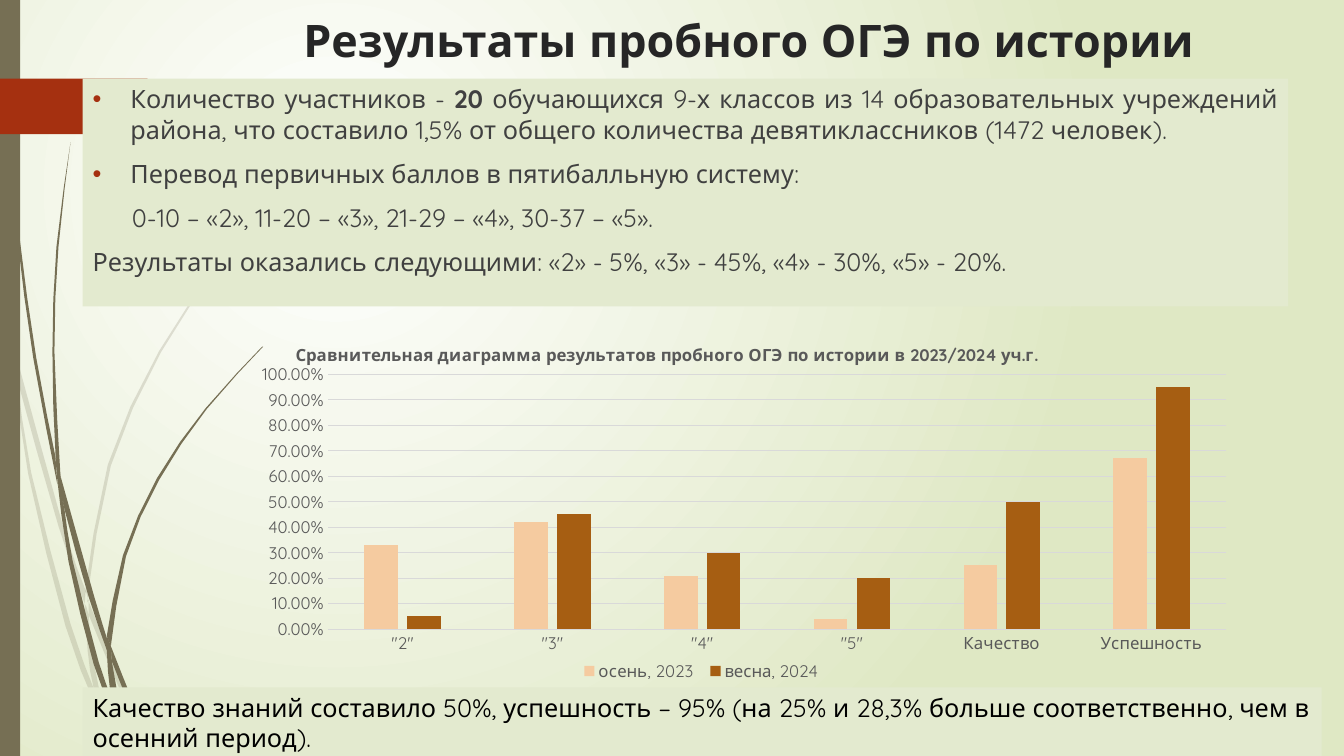
from lxml.etree import SubElement as Sub
from pptx import Presentation
from pptx.chart.data import CategoryChartData
from pptx.dml.color import RGBColor
from pptx.enum.chart import XL_CHART_TYPE as CT, XL_LEGEND_POSITION as LP, XL_TICK_MARK as TM
from pptx.enum.shapes import MSO_SHAPE as SHAPE
from pptx.enum.text import MSO_ANCHOR as ANCHOR, MSO_AUTO_SIZE as AUTO, PP_ALIGN as AL
from pptx.oxml.ns import qn
from pptx.util import Pt

FONT = "Quicksand"
COLORS = {
    "white": "FFFFFF", "green": "DFE8C4", "panel": "E3EACF", "olive": "766F54",
    "red": "A53010", "title": "262626", "body": "404040", "black": "000000",
    "label": "595959", "grid": "D9D9D9", "autumn": "F5CBA0", "spring": "A65E12",
}
FINE = 10

PALE_WISPS = [
    ([(11, 350), (9, 322), (0, 282)], [(0, 299), (10, 344), (11, 350)]),
    ([(14, 345), (17, 376), (58, 522), (84, 599)], [(85, 586), (62, 520), (14, 345)]),
    ([(155, 750), (127, 692), (92, 607), (88, 596)], [(88, 610), (123, 694), (150, 750)]),
    ([(101, 714), (93, 683), (70, 619), (31, 469), (17, 376), (11, 350)],
     [(11, 350), (28, 470), (65, 621), (92, 693), (101, 714)]),
    ([(84, 599), (87, 646), (93, 683), (105, 711)],
     [(103, 706), (91, 646), (88, 610), (84, 599)]),
    ([(88, 596), (88, 584), (110, 462), (160, 349), (229, 245), (268, 198), (312, 154)],
     [(312, 153), (268, 197), (228, 244), (158, 348), (107, 461), (85, 584), (85, 586)]),
    ([(93, 683), (101, 714), (119, 750)], [(105, 711), (93, 683)]),
]
DARK_WISPS = [
    ([(3, 0), (7, 110), (17, 233), (33, 355), (57, 481)],
     [(55, 453), (36, 355), (19, 232), (8, 109), (4, 0)]),
    ([(60, 472), (64, 505), (88, 592), (106, 645)], [(106, 633), (93, 590), (60, 472)]),
    ([(157, 749), (136, 706), (110, 641)], [(111, 656), (132, 708), (152, 749)]),
    ([(117, 722), (110, 691), (98, 657), (72, 556), (64, 505), (57, 477)],
     [(57, 477), (68, 557), (93, 659), (117, 722)]),
    ([(60, 472), (54, 349), (58, 245), (70, 141)],
     [(70, 141), (56, 245), (52, 349), (55, 449), (60, 472)]),
    ([(55, 449), (57, 477), (64, 505)], [(60, 472), (55, 449)]),
    ([(110, 641), (125, 552), (158, 476), (205, 406), (261, 344)],
     [(260, 344), (204, 405), (156, 474), (122, 551), (106, 631)]),
    ([(106, 645), (110, 691), (122, 719)], [(111, 656), (110, 641), (106, 631)]),
]


def smooth(edge, steps=2):
    ends = [edge[0], *edge, edge[-1]]
    out = [edge[0]]
    for a, b, c, d in zip(ends, ends[1:], ends[2:], ends[3:]):
        for i in range(1, steps + 1):
            t = i / steps
            out.append(tuple(
                b[k] + (c[k] - a[k]) * t / 2
                + (2 * a[k] - 5 * b[k] + 4 * c[k] - d[k]) * t ** 2 / 2
                + (3 * b[k] - a[k] - 3 * c[k] + d[k]) * t ** 3 / 2 for k in (0, 1)))
    return out


class Deck:
    def __init__(self, prs):
        self.s = prs.slides.add_slide(prs.slide_layouts[1])

    def rgb(self, name):
        return RGBColor.from_string(COLORS[name])

    def paint(self, sp, color, alpha=None):
        sp.fill.solid()
        sp.fill.fore_color.rgb = self.rgb(color)
        if alpha:
            clr = sp._element.spPr.find(qn("a:solidFill"))[0]
            Sub(clr, qn("a:alpha")).set("val", str(alpha * 1000))

    def background(self, inner, outer):
        fill = self.s.background.fill
        fill.gradient()
        for stop, color in zip(fill.gradient_stops, (inner, outer)):
            stop.color.rgb = self.rgb(color)
        grad = self.s._element.find(".//" + qn("a:gradFill"))
        grad.remove(grad.find(qn("a:lin")))
        way = Sub(grad, qn("a:path"))
        way.set("path", "circle")
        rect = Sub(way, qn("a:fillToRect"))
        for side, val in zip("ltrb", (50, 50, 100, 100)):
            rect.set(side, str(val * 1000))

    def finish(self, sp, color, alpha=None):
        sp.shadow.inherit = False
        sp.line.fill.background()
        self.paint(sp, color, alpha)

    def shape(self, kind, box, color):
        self.finish(self.s.shapes.add_shape(kind, *map(Pt, box)), color)

    def wisp(self, edges, color, alpha=None):
        pts = [(x * FINE, y * FINE) for edge in edges for x, y in smooth(edge)]
        fb = self.s.shapes.build_freeform(*pts[0], scale=Pt(0.72) / FINE)
        fb.add_line_segments(pts[1:], close=True)
        self.finish(fb.convert_to_shape(), color, alpha)

    def place(self, sp, box):
        self.s.shapes._spTree.append(sp._element)
        sp.left, sp.top, sp.width, sp.height = map(Pt, box)
        tf = sp.text_frame
        tf.word_wrap, tf.auto_size, tf.vertical_anchor = True, AUTO.NONE, ANCHOR.TOP
        return tf

    def font(self, f, size, color, bold=False):
        f.name, f.size, f.bold = FONT, Pt(size), bold
        f.color.rgb = self.rgb(color)

    def para(self, tf, runs, size, color, align=AL.LEFT, margin=0, indent=0, bullet=False):
        first = not tf.paragraphs[0].runs
        p = tf.paragraphs[0] if first else tf.add_paragraph()
        p.alignment = align
        p.space_before = Pt(0 if first else 10)
        pPr = p._p.get_or_add_pPr()
        pPr.set("marL", str(Pt(margin)))
        pPr.set("indent", str(Pt(indent)))
        if bullet:
            Sub(Sub(pPr, qn("a:buClr")), qn("a:srgbClr")).set("val", COLORS["red"])
            Sub(pPr, qn("a:buFont")).set("typeface", "Arial")
            Sub(pPr, qn("a:buChar")).set("char", "•")
        else:
            Sub(pPr, qn("a:buNone"))
        for text, bold in runs:
            r = p.add_run()
            r.text = text
            self.font(r.font, size, color, bold)

    def layout(self, el, **values):
        lay = el.find(qn("c:layout"))
        if lay is None:
            lay = Sub(el, qn("c:layout"))
            overlay = el.find(qn("c:overlay"))
            if overlay is None:
                el.insert(0, lay)
            else:
                overlay.addprevious(lay)
        man = Sub(lay, qn("c:manualLayout"))
        for key, val in values.items():
            Sub(man, qn("c:" + key)).set("val", str(val))

    def chart(self, box, title, cats, series):
        data = CategoryChartData(number_format="0.00%")
        data.categories = cats
        for name, vals, _ in series:
            data.add_series(name, vals)
        ch = self.s.shapes.add_chart(CT.COLUMN_CLUSTERED, *map(Pt, box), data).chart
        self.font(ch.font, 12, "label")
        spPr = Sub(ch._chartSpace, qn("c:spPr"))
        Sub(spPr, qn("a:noFill"))
        Sub(Sub(spPr, qn("a:ln")), qn("a:noFill"))
        ch._chartSpace.find(qn("c:chart")).addnext(spPr)
        ch.has_title = True
        r = ch.chart_title.text_frame.paragraphs[0].add_run()
        r.text = title
        self.font(r.font, 12, "label", True)
        ch.has_legend = True
        ch.legend.position, ch.legend.include_in_layout = LP.BOTTOM, False
        self.font(ch.legend.font, 12, "label")
        edge = dict(xMode="edge", yMode="edge")
        self.layout(ch.chart_title._element, **edge, x=0.18, y=0.21)
        self.layout(ch.legend._element, **edge, x=0.42, y=0.93, w=0.22, h=0.07)
        self.layout(ch._chartSpace.find(".//" + qn("c:plotArea")), layoutTarget="inner",
                    **edge, x=0.21, y=0.29, w=0.77, h=0.58)
        plot = ch.plots[0]
        plot.gap_width, plot.overlap, plot.vary_by_categories = 219, -27, False
        for sr, (_, _, color) in zip(plot.series, series):
            sr.format.fill.solid()
            sr.format.fill.fore_color.rgb = self.rgb(color)
        cat, val = ch.category_axis, ch.value_axis
        for axis in (cat, val):
            axis.major_tick_mark = axis.minor_tick_mark = TM.NONE
            self.font(axis.tick_labels.font, 12, "label")
        val.minimum_scale, val.maximum_scale, val.major_unit = 0, 1, 0.1
        val.tick_labels.number_format, val.tick_labels.number_format_is_linked = "0.00%", False
        val.format.line.fill.background()
        for line in (cat.format.line, val.major_gridlines.format.line):
            line.color.rgb, line.width = self.rgb("grid"), Pt(0.75)


def main():
    prs = Presentation()
    prs.slide_width, prs.slide_height = Pt(960), Pt(540)
    d = Deck(prs)
    d.background("white", "green")
    for wisps, alpha in ((PALE_WISPS, 20), (DARK_WISPS, None)):
        for edges in wisps:
            d.wisp(edges, "olive", alpha)
    d.shape(SHAPE.RECTANGLE, (0, 0, 14.4, 540), "olive")
    d.shape(SHAPE.PENTAGON, (0, 56.2, 125, 39.6), "red")

    tf = d.place(d.s.shapes.title, (138.2, 5.8, 793.4, 100.8))
    d.para(tf, [("Результаты пробного ОГЭ по истории", True)], 32, "title", AL.CENTER)

    sp = d.s.placeholders[1]
    tf = d.place(sp, (59, 56.2, 861.1, 162.7))
    d.paint(sp, "panel")
    item = dict(align=AL.JUSTIFY, margin=27, indent=-27, bullet=True)
    for runs, style in [
        ([("Количество участников - ", False), ("20 ", True),
          ("обучающихся 9-х классов из 14 образовательных учреждений района, что составило 1,5% "
           "от общего количества девятиклассников (1472 человек).", False)], item),
        ([("Перевод первичных баллов в пятибалльную систему:", False)], item),
        ([("0-10 – «2», 11-20 – «3», 21-29 – «4», 30-37 – «5».", False)], dict(indent=28)),
        ([("Результаты оказались следующими: «2» - 5%, «3» - 45%, «4» - 30%, «5» - 20%.", False)],
         dict(align=AL.JUSTIFY)),
    ]:
        d.para(tf, runs, 18, "body", **style)

    d.chart((59, 176.4, 833.8, 313.9),
            "Сравнительная диаграмма результатов пробного ОГЭ по истории в 2023/2024 уч.г.",
            ['"2"', '"3"', '"4"', '"5"', "Качество", "Успешность"],
            [("осень, 2023", (0.33, 0.42, 0.21, 0.04, 0.25, 0.67), "autumn"),
             ("весна, 2024", (0.05, 0.45, 0.3, 0.2, 0.5, 0.95), "spring")])

    box = (59, 491, 885, 49)
    sp = d.s.shapes.add_textbox(*map(Pt, box))
    d.paint(sp, "panel")
    d.para(d.place(sp, box), [("Качество знаний составило 50%, успешность – 95% (на 25% и 28,3% больше "
                               "соответственно, чем в осенний период).", False)], 18, "black")
    prs.save("out.pptx")


if __name__ == "__main__":
    main()
